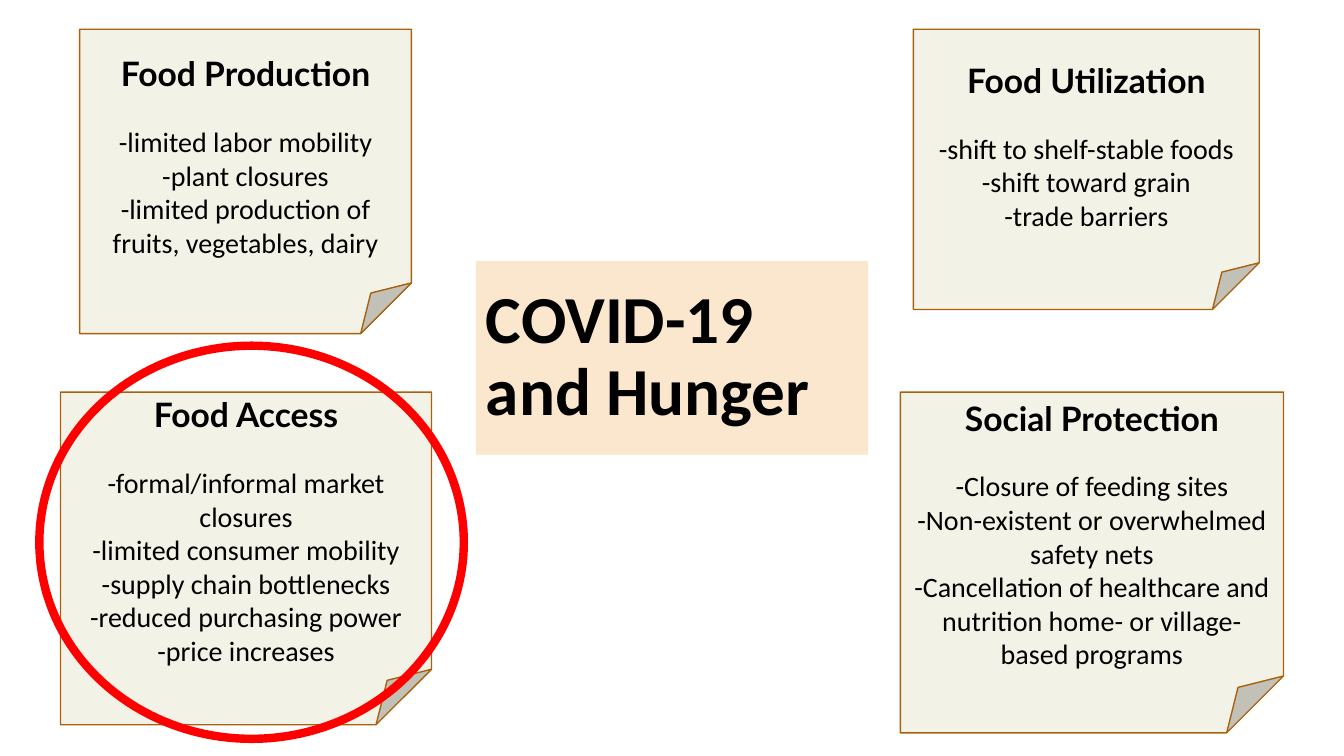
from dataclasses import dataclass

from pptx import Presentation
from pptx.dml.color import RGBColor
from pptx.enum.shapes import MSO_SHAPE
from pptx.enum.text import MSO_ANCHOR, MSO_AUTO_SIZE, PP_ALIGN
from pptx.shapes.autoshape import Shape
from pptx.slide import Slide
from pptx.text.text import TextFrame
from pptx.util import Inches, Pt

BLACK = RGBColor(0x00, 0x00, 0x00)
PEACH = RGBColor(0xFB, 0xE6, 0xCE)
CREAM = RGBColor(0xF3, 0xF2, 0xE6)
BROWN = RGBColor(0xA9, 0x61, 0x0D)
RED = RGBColor(0xFF, 0x00, 0x00)


@dataclass(frozen=True)
class Note:
    heading: str
    points: tuple[str, ...]
    left: float
    top: float
    width: float
    height: float


NOTES = (
    Note("Food Production",
         ("-limited labor mobility", "-plant closures",
          "-limited production of fruits, vegetables, dairy"),
         0.79, 0.29, 3.29, 3.02),
    Note("Food Access",
         ("-formal/informal market closures", "-limited consumer mobility",
          "-supply chain bottlenecks", "-reduced purchasing power",
          "-price increases"),
         0.6, 3.89, 3.68, 3.3),
    Note("Food Utilization",
         ("-shift to shelf-stable foods", "-shift toward grain",
          "-trade barriers"),
         9.06, 0.29, 3.43, 2.78),
    Note("Social Protection",
         ("-Closure of feeding sites",
          "-Non-existent or overwhelmed safety nets",
          "-Cancellation of healthcare and nutrition home- or "
          "village-based programs"),
         8.93, 3.89, 3.8, 3.38),
)


def write(tf: TextFrame, text: str, *, size: float, font: str = "Calibri",
          bold: bool = False, align: PP_ALIGN = PP_ALIGN.CENTER,
          line_spacing: float = 1.0, space_after: float = 0) -> None:
    """Fill the empty first paragraph, or append a new one."""
    p = tf.paragraphs[0] if not tf.text else tf.add_paragraph()
    p.alignment = align
    p.line_spacing = line_spacing
    p.space_before = Pt(0)
    p.space_after = Pt(space_after)
    r = p.add_run()
    r.text = text
    r.font.name = font
    r.font.size = Pt(size)
    r.font.bold = bold
    r.font.color.rgb = BLACK


def add_outlined(s: Slide, kind: MSO_SHAPE, left: float, top: float,
                 width: float, height: float, color: RGBColor,
                 weight: float) -> Shape:
    sp = s.shapes.add_shape(kind, Inches(left), Inches(top),
                            Inches(width), Inches(height))
    sp.shadow.inherit = False
    sp.line.color.rgb = color
    sp.line.width = Pt(weight)
    return sp


def add_note(s: Slide, note: Note) -> None:
    sp = add_outlined(s, MSO_SHAPE.FOLDED_CORNER, note.left, note.top,
                      note.width, note.height, BROWN, 1)
    sp.fill.solid()
    sp.fill.fore_color.rgb = CREAM
    tf = sp.text_frame
    tf.word_wrap = True
    tf.vertical_anchor = MSO_ANCHOR.MIDDLE
    write(tf, note.heading, size=24, font="Lato", bold=True, space_after=22)
    for point in note.points:
        write(tf, point, size=20)


def add_title(s: Slide) -> None:
    title = s.shapes.title
    title.left, title.top = Inches(4.72), Inches(2.59)
    title.width, title.height = Inches(3.89), Inches(1.92)
    title.fill.solid()
    title.fill.fore_color.rgb = PEACH
    tf = title.text_frame
    tf.word_wrap = True
    tf.auto_size = MSO_AUTO_SIZE.NONE
    tf.vertical_anchor = MSO_ANCHOR.MIDDLE
    write(tf, "COVID-19 and Hunger", size=48, bold=True,
          align=PP_ALIGN.LEFT, line_spacing=0.9)


def main() -> None:
    prs = Presentation()
    prs.slide_width, prs.slide_height = Inches(13.33), Inches(7.5)
    s = prs.slides.add_slide(prs.slide_layouts[5])
    add_title(s)
    for note in NOTES:
        add_note(s, note)
    ring = add_outlined(s, MSO_SHAPE.OVAL, 0.39, 3.43, 4.21, 3.9, RED, 6)
    ring.fill.background()
    prs.save("out.pptx")


if __name__ == "__main__":
    main()
